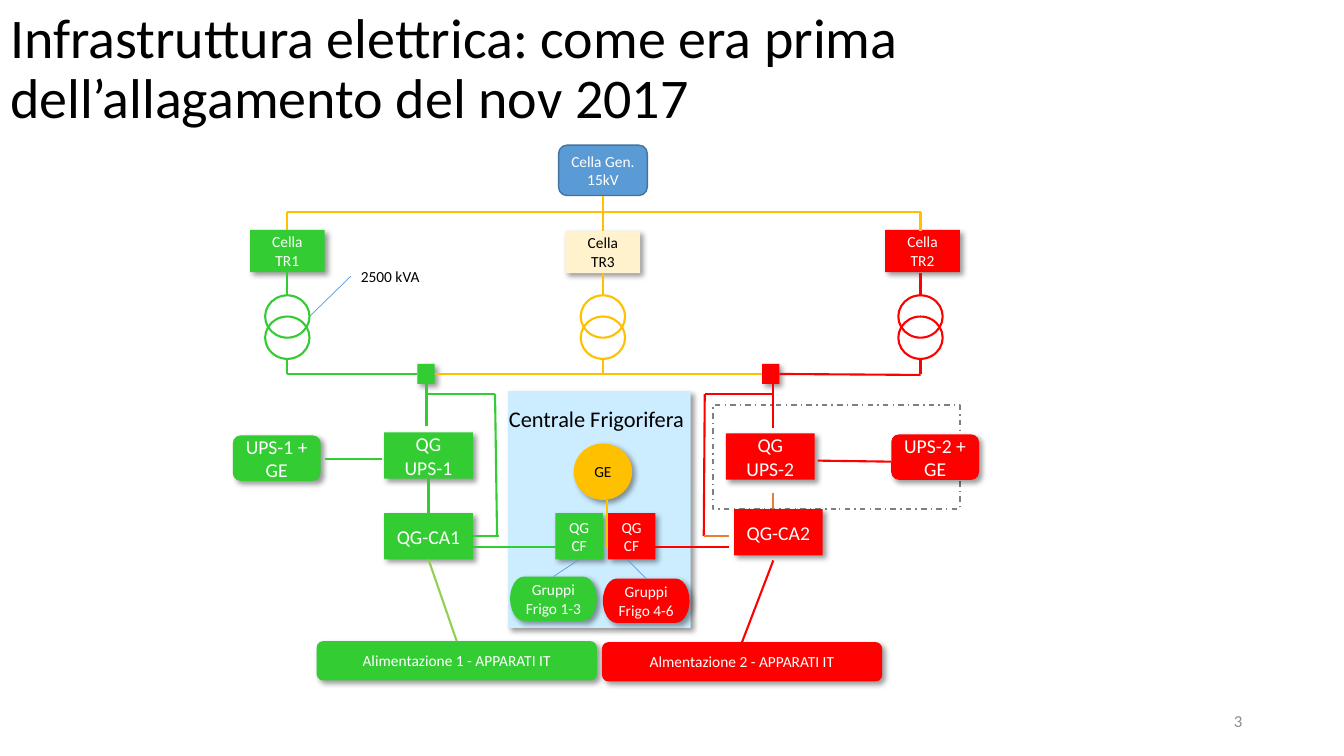
from dataclasses import dataclass
from typing import Optional

from lxml.etree import SubElement
from pptx import Presentation
from pptx.dml.color import RGBColor
from pptx.enum.dml import MSO_LINE
from pptx.enum.shapes import MSO_CONNECTOR, MSO_SHAPE
from pptx.enum.text import MSO_ANCHOR, MSO_AUTO_SIZE, PP_ALIGN
from pptx.oxml import parse_xml
from pptx.oxml.ns import nsdecls, qn
from pptx.util import Emu, Pt

PX = 9144  # EMU per px: 100 px to the inch
RECT, ROUND = MSO_SHAPE.RECTANGLE, MSO_SHAPE.ROUNDED_RECTANGLE
OVAL, PILL = MSO_SHAPE.OVAL, MSO_SHAPE.FLOWCHART_TERMINATOR


@dataclass(frozen=True)
class Theme:
    font: str = "Calibri"
    black: str = "000000"
    white: str = "FFFFFF"
    grey: str = "8C8C8C"
    dash: str = "808080"
    green: str = "33CC33"
    lime: str = "92D050"
    red: str = "FF0000"
    orange: str = "ED7D31"
    yellow: str = "FFC000"
    cream: str = "FFF2CC"
    ice: str = "CCECFF"
    blue: str = "5B9BD5"
    navy: str = "43739E"
    title: int = 40
    heading: int = 16
    large: int = 14
    number: int = 12
    small: int = 11
    thick: float = 1.5
    edge: float = 1
    thin: float = 0.5


T = Theme()


@dataclass(frozen=True)
class Box:
    left: int
    top: int
    width: int
    height: int
    fill: Optional[str] = None
    text: str = ""
    size: int = T.small
    kind: MSO_SHAPE = RECT
    ink: str = T.white
    line: Optional[str] = None
    weight: float = T.edge
    inset: int = 4


@dataclass(frozen=True)
class Wire:
    color: str
    start: tuple[int, int]
    end: tuple[int, int]
    weight: float = T.thick


def px(value: float) -> Emu:
    return Emu(round(value * PX))


def color(value: str) -> RGBColor:
    return RGBColor.from_string(value)


def write(frame, text: str, size: int, ink: str, align=PP_ALIGN.LEFT) -> None:
    frame.text = text
    for para in frame.paragraphs:
        para.alignment = align
        for span in para.runs:
            span.font.name, span.font.size = T.font, Pt(size)
            span.font.color.rgb = color(ink)


def add_shadow(shape) -> None:
    effects = shape._element.spPr.find(qn("a:effectLst"))
    effects.append(parse_xml(
        f'<a:outerShdw {nsdecls("a")} blurRad="50800" dist="38100" dir="2700000" algn="tl" '
        'rotWithShape="0"><a:srgbClr val="000000"><a:alpha val="40000"/></a:srgbClr></a:outerShdw>'))


def draw_box(page, box: Box):
    shape = page.shapes.add_shape(
        box.kind, px(box.left), px(box.top), px(box.width), px(box.height))
    shape.shadow.inherit = False
    if box.fill:
        shape.fill.solid()
        shape.fill.fore_color.rgb = color(box.fill)
    else:
        shape.fill.background()
    if box.line:
        shape.line.color.rgb = color(box.line)
        shape.line.width = Pt(box.weight)
    else:
        shape.line.fill.background()
        add_shadow(shape)
    if box.text:
        frame = shape.text_frame
        frame.word_wrap = True
        frame.vertical_anchor = MSO_ANCHOR.MIDDLE
        frame.margin_left = frame.margin_right = px(box.inset)
        write(frame, box.text, box.size, box.ink, PP_ALIGN.CENTER)
    return shape


def draw_label(page, left: int, top: int, width: int, height: int, text: str,
               size: int, ink: str = T.black, align=PP_ALIGN.LEFT, wrap: bool = True):
    label = page.shapes.add_textbox(px(left), px(top), px(width), px(height))
    label.text_frame.word_wrap = wrap
    write(label.text_frame, text, size, ink, align)
    return label


def find_side(point: tuple[int, int], drawn: list):
    """Return the shape and side whose middle lies at the point."""
    for box, shape in drawn:
        middle_x, middle_y = box.left + box.width / 2, box.top + box.height / 2
        sides = ((middle_x, box.top), (box.left, middle_y),
                 (middle_x, box.top + box.height), (box.left + box.width, middle_y))
        for index, (x, y) in enumerate(sides):
            if box.kind != OVAL and abs(point[0] - x) <= 1 and abs(point[1] - y) <= 1:
                return shape, index
    return None


def draw_wire(page, wire: Wire, drawn: list) -> None:
    connector = page.shapes.add_connector(
        MSO_CONNECTOR.STRAIGHT, *(px(value) for value in wire.start + wire.end))
    connector.line.color.rgb = color(wire.color)
    connector.line.width = Pt(wire.weight)
    SubElement(connector._element.spPr, qn("a:effectLst"))
    for point, join in ((wire.start, connector.begin_connect), (wire.end, connector.end_connect)):
        side = find_side(point, drawn)
        if side:
            join(*side)


PANEL = Box(504, 388, 181, 235, T.ice)
UPS_AREA = Box(707, 402, 245, 103, line=T.dash)

BOXES = [
    # Medium voltage cells
    Box(554, 144, 88, 50, T.blue, "Cella Gen.\n15kV", kind=ROUND, line=T.navy),
    Box(248, 228, 74, 42, T.green, "Cella TR1", inset=10),
    Box(561, 229, 74, 42, T.cream, "Cella TR3", ink=T.black, inset=10),
    Box(878, 228, 74, 42, T.red, "Cella TR2", inset=10),
    # Switches
    Box(414, 361, 17, 20, T.green),
    Box(756, 361, 17, 20, T.red),
    # Switchboards and UPS
    Box(231, 432, 87, 45, T.green, "UPS-1 +\nGE", T.large, ROUND),
    Box(381, 429, 88, 46, T.green, "QG\nUPS-1", T.large),
    Box(381, 509, 88, 46, T.green, "QG-CA1", T.large),
    Box(884, 431, 87, 45, T.red, "UPS-2 +\nGE", T.large, ROUND),
    Box(720, 430, 88, 46, T.red, "QG\nUPS-2", T.large),
    Box(728, 505, 88, 46, T.red, "QG-CA2", T.large),
    # Cooling plant
    Box(569, 440, 58, 56, T.yellow, "GE", kind=OVAL, ink=T.black),
    Box(551, 509, 47, 46, T.green, "QG\nCF"),
    Box(603, 509, 47, 46, T.red, "QG\nCF"),
    Box(506, 572, 86, 44, T.green, "Gruppi\nFrigo 1-3", kind=PILL),
    Box(598, 574, 86, 44, T.red, "Gruppi\nFrigo 4-6", kind=PILL),
    # IT supplies
    Box(314, 636, 278, 39, T.green, "Alimentazione 1 - APPARATI IT", kind=ROUND),
    Box(597, 637, 278, 39, T.red, "Almentazione 2 - APPARATI IT", kind=ROUND),
]

# Transformers: two overlapping rings, with a lead above and below
COLUMNS = [(285, 270, T.green), (598, 271, T.yellow), (913, 271, T.red)]
RINGS = [Box(x - 22, top, 44, 42, line=ink, weight=T.thick)
         for x, _, ink in COLUMNS for top in (293, 314)]
RINGS = [Box(ring.left, ring.top, 44, 42, kind=OVAL, line=ring.line, weight=T.thick)
         for ring in RINGS]
LEADS = [Wire(ink, (x, top), (x, bottom)) for x, cell, ink in COLUMNS
         for top, bottom in ((cell, 293), (357, 371))]

WIRES = LEADS + [
    # Distribution bars
    Wire(T.yellow, (285, 210), (913, 210)),
    Wire(T.yellow, (285, 228), (285, 210)),
    Wire(T.yellow, (598, 229), (598, 194)),
    Wire(T.yellow, (913, 229), (913, 210)),
    Wire(T.green, (285, 371), (414, 371)),
    Wire(T.yellow, (431, 371), (756, 371)),
    Wire(T.red, (773, 372), (913, 372)),
    # Green branch
    Wire(T.green, (423, 423), (423, 371)),
    Wire(T.green, (425, 509), (425, 475)),
    Wire(T.green, (423, 391), (491, 391)),
    Wire(T.green, (491, 391), (493, 532)),
    Wire(T.green, (495, 532), (469, 532)),
    Wire(T.green, (466, 543), (551, 543)),
    Wire(T.green, (322, 455), (379, 455)),
    Wire(T.lime, (425, 555), (453, 636)),
    # Red branch
    Wire(T.red, (767, 425), (767, 371)),
    Wire(T.orange, (767, 505), (767, 489)),
    Wire(T.red, (767, 391), (699, 391)),
    Wire(T.red, (699, 391), (698, 532)),
    Wire(T.orange, (698, 532), (723, 532)),
    Wire(T.red, (645, 543), (723, 543)),
    Wire(T.red, (811, 457), (884, 458)),
    Wire(T.red, (767, 556), (736, 637)),
    # Cooling plant and callout
    Wire(T.yellow, (602, 496), (602, 544)),
    Wire(T.blue, (549, 572), (574, 555), T.thin),
    Wire(T.blue, (641, 574), (622, 555), T.thin),
    Wire(T.blue, (348, 274), (307, 314), T.thin),
]


def main() -> None:
    deck = Presentation()
    deck.slide_width, deck.slide_height = px(1333), px(750)
    page = deck.slides.add_slide(deck.slide_layouts[5])

    # Title
    title = page.shapes.title
    title.left, title.top, title.width, title.height = px(0), px(0), px(1128), px(140)
    frame = title.text_frame
    write(frame, "Infrastruttura elettrica: come era prima dell’allagamento del nov 2017",
          T.title, T.black)
    frame.paragraphs[0].line_spacing = 0.9
    frame.vertical_anchor = MSO_ANCHOR.MIDDLE
    frame.auto_size = MSO_AUTO_SIZE.NONE

    # Diagram
    draw_box(page, PANEL)
    draw_box(page, UPS_AREA).line.dash_style = MSO_LINE.DASH_DOT
    drawn = [(box, draw_box(page, box)) for box in RINGS + BOXES]
    for wire in WIRES:
        draw_wire(page, wire, drawn)

    # Labels and page number
    draw_label(page, 495, 397, 226, 37, "Centrale Frigorifera", T.heading)
    draw_label(page, 348, 260, 80, 29, "2500 kVA", T.small, wrap=False)
    number = draw_label(page, 942, 695, 300, 40, "3", T.number, T.grey, PP_ALIGN.RIGHT)
    number.text_frame.vertical_anchor = MSO_ANCHOR.MIDDLE

    deck.save("out.pptx")


if __name__ == "__main__":
    main()
